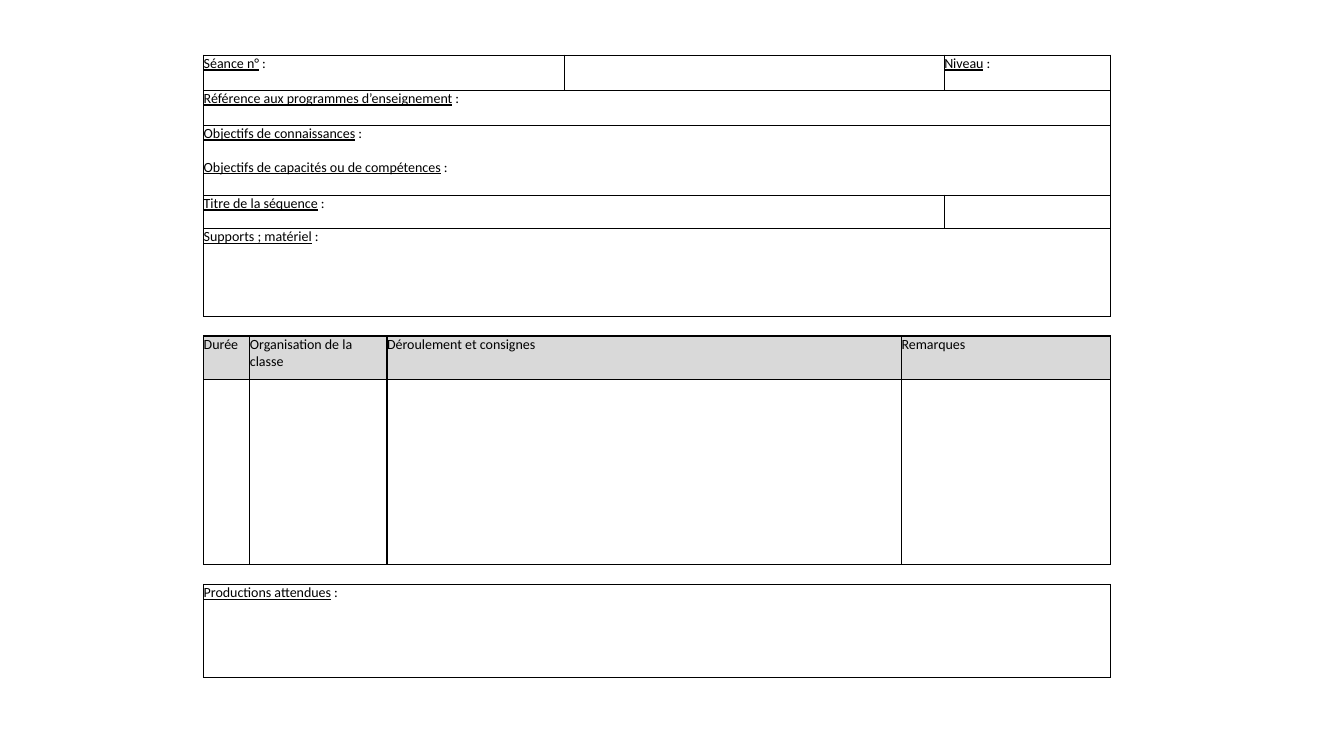
"""Build a one-page lesson plan form made of three stacked tables."""
from lxml import etree
from pptx import Presentation
from pptx import util as u
from pptx.dml.color import RGBColor
from pptx.enum import text
from pptx.oxml import ns

THEME = {
    "font": "Calibri",
    "size": u.Pt(10),
    "gap": u.Pt(12),
    "border": u.Pt(1),
    "ink": "000000",
    "header": "D9D9D9",
}
SCALE = 6350
LEFT = 291
COLON = " :"


def px(length):
    return u.Emu(length * SCALE)


def add_borders(cell):
    properties = cell._tc.get_or_add_tcPr()
    for side in ("lnL", "lnR", "lnT", "lnB"):
        line = etree.SubElement(properties, ns.qn(f"a:{side}"), w=str(THEME["border"]))
        fill = etree.SubElement(line, ns.qn("a:solidFill"))
        etree.SubElement(fill, ns.qn("a:srgbClr"), val=THEME["ink"])


forms = [
    {
        "top": 79,
        "columns": [515, 543, 238],
        "rows": [50, 50, 100, 48, 125],
        "spans": {1: 3, 2: 3, 3: 2, 4: 3},
        "shaded_rows": [],
        "cells": {
            (0, 0): ["Séance n° :"],
            (0, 2): ["Niveau :"],
            (1, 0): ["Référence aux programmes d’enseignement :"],
            (2, 0): ["Objectifs de connaissances :", "Objectifs de capacités ou de compétences :"],
            (3, 0): ["Titre de la séquence :"],
            (4, 0): ["Supports ; matériel :"],
        },
    },
    {
        "top": 480,
        "columns": [66, 196, 735, 298],
        "rows": [62, 264],
        "spans": {},
        "shaded_rows": [0],
        "cells": {
            (0, 0): ["Durée"],
            (0, 1): ["Organisation de la classe"],
            (0, 2): ["Déroulement et consignes"],
            (0, 3): ["Remarques"],
        },
    },
    {
        "top": 835,
        "columns": [1295],
        "rows": [133],
        "spans": {},
        "shaded_rows": [],
        "cells": {(0, 0): ["Productions attendues :"]},
    },
]

deck = Presentation()
deck.slide_width, deck.slide_height = px(1920), px(1080)
page = deck.slides.add_slide(deck.slide_layouts[6])

for form in forms:
    columns, rows = form["columns"], form["rows"]
    table = page.shapes.add_table(
        len(rows), len(columns), px(LEFT), px(form["top"]), px(sum(columns)), px(sum(rows))
    ).table
    table.first_row = table.horz_banding = False
    for column, width in zip(table.columns, columns):
        column.width = px(width)
    for row, height in zip(table.rows, rows):
        row.height = px(height)

    for row_index, row in enumerate(table.rows):
        for column_index, cell in enumerate(row.cells):
            add_borders(cell)
            if row_index in form["shaded_rows"]:
                cell.fill.solid()
                cell.fill.fore_color.rgb = RGBColor.from_string(THEME["header"])
            else:
                cell.fill.background()
            cell.margin_left = cell.margin_right = cell.margin_top = cell.margin_bottom = 0
            labels = form["cells"].get((row_index, column_index), [])
            for index, label in enumerate(labels):
                box = cell.text_frame
                para = box.add_paragraph() if index else box.paragraphs[0]
                para.alignment = text.PP_ALIGN.LEFT
                if index:
                    para.space_before = THEME["gap"]
                title = label.removesuffix(COLON)
                has_colon = title != label
                parts = [(title, has_colon)] + [(COLON, False)] * has_colon
                for words, underlined in parts:
                    span = para.add_run()
                    span.text = words
                    span.font.name = THEME["font"]
                    span.font.size = THEME["size"]
                    span.font.underline = underlined
                    span.font.color.rgb = RGBColor.from_string(THEME["ink"])

    for row_index, width in form["spans"].items():
        table.cell(row_index, 0).merge(table.cell(row_index, width - 1))

deck.save("out.pptx")
